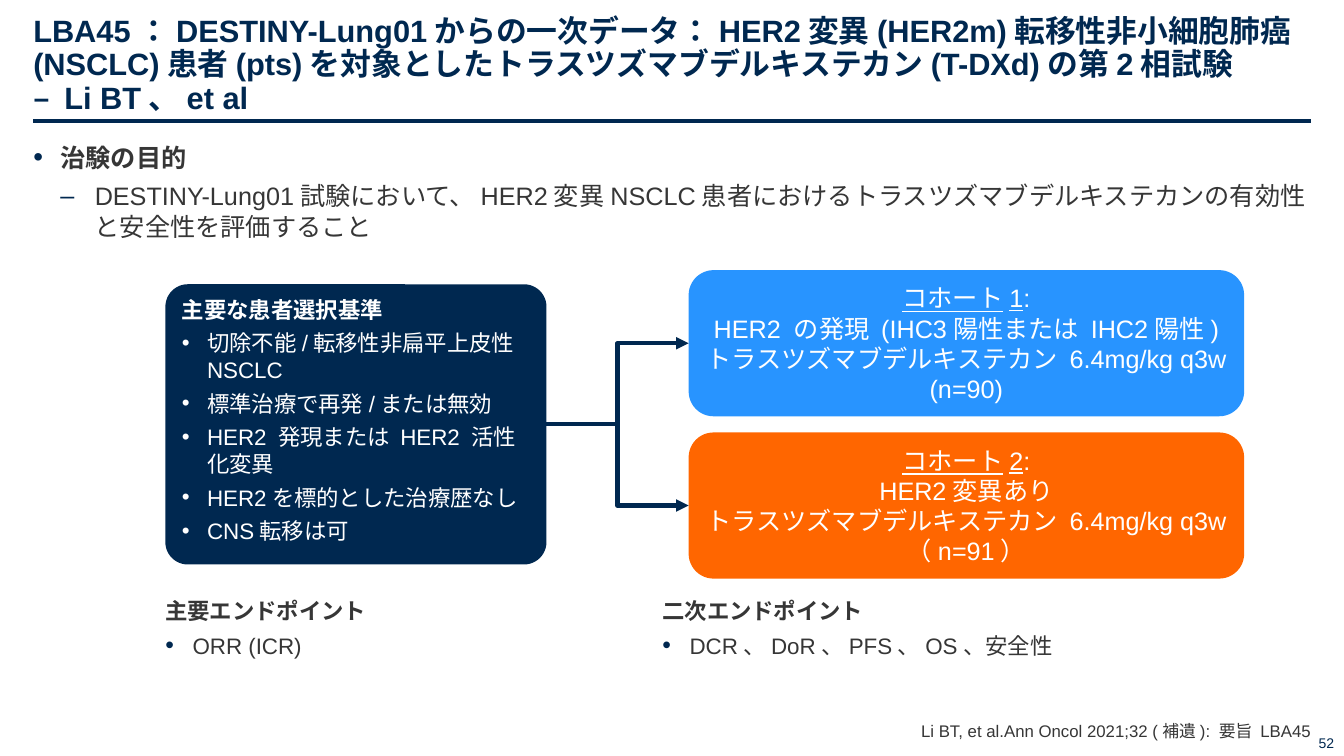
import copy

import lxml.etree
import pptx
import pptx.dml.color
import pptx.enum.lang
import pptx.enum.shapes
import pptx.enum.text
import pptx.oxml.ns
import pptx.util

EMU_PER_PX = 9144  # 100 px to the inch
NAVY, GREY, WHITE = "002850", "363636", "FFFFFF"
BLUE, ORANGE = "2894FF", "FF6600"

ALIGN = pptx.enum.text.PP_ALIGN
ANCHOR = pptx.enum.text.MSO_ANCHOR
SHAPE = pptx.enum.shapes.MSO_SHAPE
CONNECTOR = pptx.enum.shapes.MSO_CONNECTOR
qn = pptx.oxml.ns.qn


def px(n):
    return pptx.util.Emu(n * EMU_PER_PX)


def rgb(hex_color):
    return pptx.dml.color.RGBColor.from_string(hex_color)


def sub(parent, tag, **attrs):
    return lxml.etree.SubElement(parent, qn(tag), attrs)


def set_bullet(p, char, indent, hang, color, scale):
    pPr = p._p.get_or_add_pPr()
    pPr.set("marL", str(px(indent)))
    pPr.set("indent", str(-px(hang)))
    sub(sub(pPr, "a:buClr"), "a:srgbClr", val=color)
    sub(pPr, "a:buSzPct", val=str(scale * 1000))
    sub(pPr, "a:buFont", typeface="Arial")
    sub(pPr, "a:buChar", char=char)


def add_text(tf, text, size=18, color=GREY, bold=False, underlined="", align=ALIGN.LEFT,
             before=0, after=0, spacing=None, level=0, bullet=None, indent=27, hang=27,
             bullet_color=NAVY, bullet_scale=110):
    """Add one paragraph; each newline becomes a line break."""
    p = tf.paragraphs[0]
    if p.runs:
        p = tf.add_paragraph()
    p.alignment, p.level = align, level
    p.space_before, p.space_after = pptx.util.Pt(before), pptx.util.Pt(after)
    if spacing:
        p.line_spacing = spacing
    if bullet:
        set_bullet(p, bullet, indent, hang, bullet_color, bullet_scale)

    pieces = [(underlined, True)] if underlined else []
    for i, line in enumerate(text.split("\n")):
        pieces += [("\n", False)] * (i > 0) + [(line, False)]
    for piece, underline in pieces:
        if piece == "\n":
            p.add_line_break()
            continue
        r = p.add_run()
        r.text = piece
        r.font.name, r.font.size = "Arial", pptx.util.Pt(size)
        r.font.bold, r.font.underline = bold, underline
        r.font.color.rgb = rgb(color)
        r.font.language_id = pptx.enum.lang.MSO_LANGUAGE_ID.JAPANESE
    for br in p._p.findall(qn("a:br")):
        br.append(copy.deepcopy(p.runs[-1]._r.rPr))


def set_frame(sp, anchor=ANCHOR.TOP, side=0, top=5, bottom=5):
    tf = sp.text_frame
    tf.word_wrap = True
    tf.auto_size = pptx.enum.text.MSO_AUTO_SIZE.NONE
    tf.vertical_anchor = anchor
    tf.margin_left = tf.margin_right = px(side)
    tf.margin_top, tf.margin_bottom = px(top), px(bottom)
    return tf


def place(sp, x, y, w, h):
    sp.left, sp.top, sp.width, sp.height = px(x), px(y), px(w), px(h)


def add_box(slide, x, y, w, h, **frame):
    return set_frame(slide.shapes.add_textbox(px(x), px(y), px(w), px(h)), **frame)


def add_card(slide, x, y, w, h, fill, radius):
    sp = slide.shapes.add_shape(SHAPE.ROUNDED_RECTANGLE, px(x), px(y), px(w), px(h))
    sp.adjustments[0] = radius
    sp.shadow.inherit = False
    sp.fill.solid()
    sp.fill.fore_color.rgb = rgb(fill)
    sp.line.fill.background()
    return sp


def add_line(slide, kind, x1, y1, x2, y2, width):
    line = slide.shapes.add_connector(kind, px(x1), px(y1), px(x2), px(y2))
    line.line.color.rgb = rgb(NAVY)
    line.line.width = pptx.util.Pt(width)
    sub(line._element.spPr, "a:effectLst")
    return line


def add_arrow(slide, start, end):
    arrow = add_line(slide, CONNECTOR.ELBOW, 0, 0, 100, 100, 3)
    arrow.begin_connect(start, 3)
    arrow.end_connect(end, 1)
    sub(arrow.line._get_or_add_ln(), "a:tailEnd", type="triangle")


def add_criteria(slide):
    sp = add_card(slide, 164, 282, 378, 278, NAVY, 0.08)
    tf = set_frame(sp, side=10)
    style = dict(size=16, color=WHITE, after=4.8)
    add_text(tf, "主要な患者選択基準", bold=True, **style)
    for text in ("切除不能/転移性非扁平上皮性NSCLC", "標準治療で再発/または無効",
                 "HER2 発現または HER2 活性化変異", "HER2を標的とした治療歴なし",
                 "CNS転移は可"):
        add_text(tf, text, bullet="•", indent=25, hang=25, bullet_color=WHITE,
                 bullet_scale=100, **style)
    return sp


def add_cohort(slide, y, fill, name, group, count):
    sp = add_card(slide, 683, y, 551, 145, fill, 0.17)
    tf = set_frame(sp, ANCHOR.MIDDLE, side=10, top=0, bottom=0)
    style = dict(color=WHITE, align=ALIGN.CENTER)
    add_text(tf, ":\n" + group, underlined=name, **style)
    add_text(tf, "トラスツズマブデルキステカン 6.4mg/kg q3w", **style)
    add_text(tf, count, **style)
    return sp


def add_endpoint(slide, x, heading, measures):
    tf = add_box(slide, x, 587, 457, 112)
    add_text(tf, heading, size=16, bold=True, after=6)
    add_text(tf, measures, size=16, after=6, bullet="•")


def main():
    prs = pptx.Presentation()
    prs.slide_width, prs.slide_height = px(1333), px(750)
    slide = prs.slides.add_slide(prs.slide_layouts[1])
    title, body = slide.placeholders

    # Title and rule
    place(title, 33, 12, 1267, 103)
    add_text(set_frame(title, ANCHOR.BOTTOM, bottom=0),
             "LBA45：DESTINY-Lung01からの一次データ：HER2変異(HER2m)転移性非小細胞肺癌"
             "(NSCLC)患者(pts)を対象としたトラスツズマブデルキステカン(T-DXd)の第2相試験\n"
             "– Li BT、et al", size=22, color=NAVY, bold=True, spacing=0.9)
    add_line(slide, CONNECTOR.STRAIGHT, 33, 120, 1300, 120, 2.25)

    # Study objective
    place(body, 33, 136, 1267, 120)
    tf = set_frame(body)
    add_text(tf, "治験の目的", bold=True, after=6, bullet="•")
    add_text(tf, "DESTINY-Lung01試験において、HER2変異NSCLC患者における"
             "トラスツズマブデルキステカンの有効性と安全性を評価すること",
             after=6, level=1, bullet="–", indent=61, hang=34, bullet_scale=100)

    # Study design
    criteria = add_criteria(slide)
    cohorts = (
        (268, BLUE, "コホート1", "HER2 の発現 (IHC3陽性または IHC2陽性)", "(n=90)"),
        (429, ORANGE, "コホート2", "HER2変異あり", "（n=91）"),
    )
    for cohort in cohorts:
        add_arrow(slide, criteria, add_cohort(slide, *cohort))

    # Endpoints
    add_endpoint(slide, 164, "主要エンドポイント", "ORR (ICR)")
    add_endpoint(slide, 657, "二次エンドポイント", "DCR、DoR、PFS、OS、安全性")

    # Citation and page number
    tf = add_box(slide, 698, 713, 602, 22, anchor=ANCHOR.BOTTOM, top=0, bottom=0)
    add_text(tf, "Li BT, et al.Ann Oncol 2021;32 (補遺): 要旨 LBA45",
             size=12, align=ALIGN.RIGHT)
    tf = add_box(slide, 1268, 710, 65, 40, anchor=ANCHOR.BOTTOM, side=10)
    tf.margin_right = px(10)
    add_text(tf, "52", size=10, color=NAVY, align=ALIGN.RIGHT)

    prs.save("out.pptx")


if __name__ == "__main__":
    main()
